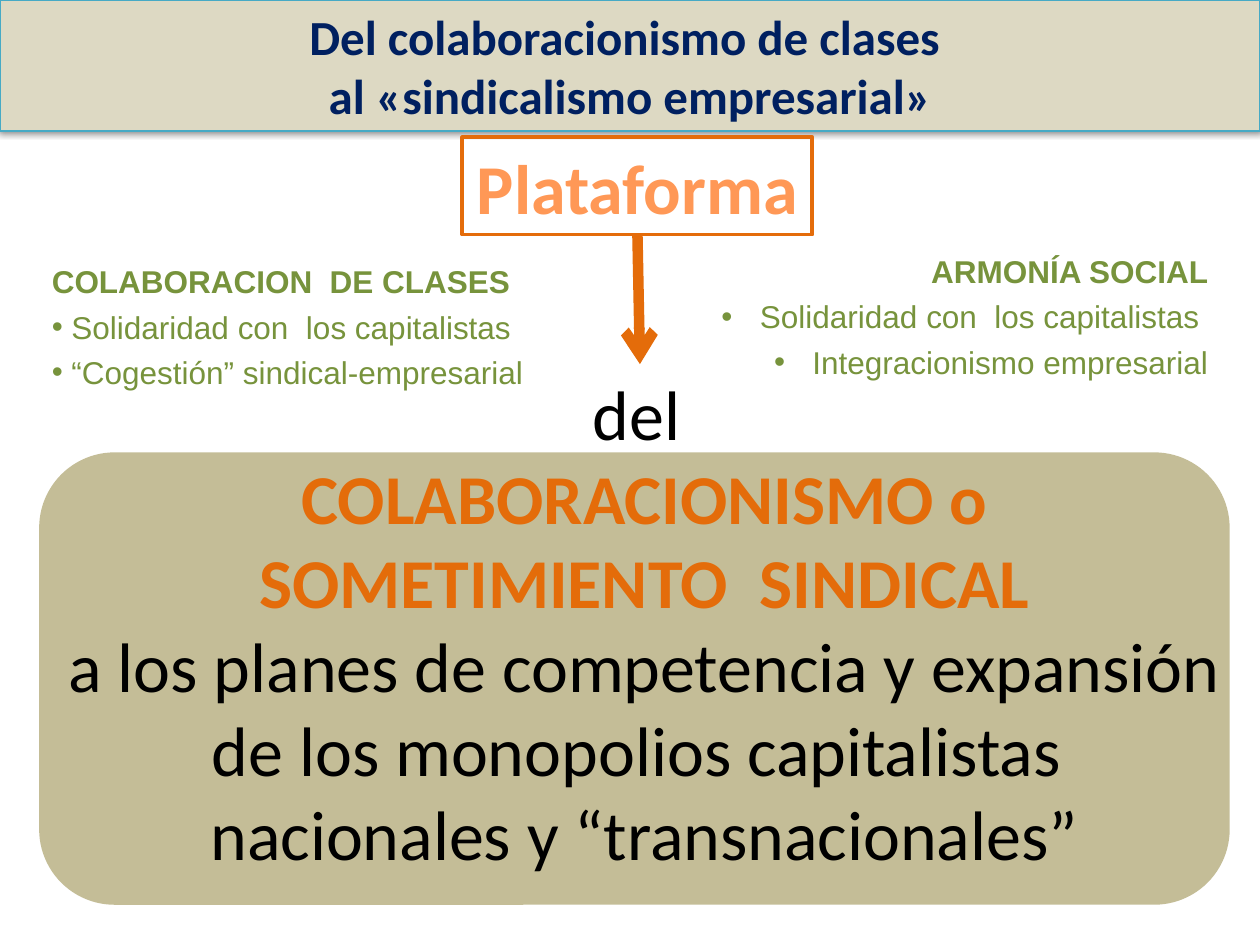
from dataclasses import dataclass

import pptx
import pptx.dml.color
import pptx.enum.dml
import pptx.enum.shapes
import pptx.enum.text
import pptx.oxml
import pptx.oxml.ns
import pptx.util
from lxml import etree
from pptx.util import Cm, Pt

ALIGN = pptx.enum.text.PP_ALIGN
SHAPE = pptx.enum.shapes.MSO_SHAPE
qn = pptx.oxml.ns.qn


@dataclass(frozen=True)
class Theme:
    heading_font: str = "Calibri"
    list_font: str = "Arial"
    title_size: int = 28
    main_size: int = 40
    list_size: int = 18
    navy: str = "002060"
    orange: str = "E46C0A"
    green: str = "77933C"
    black: str = "000000"
    sand: str = "DDD9C3"
    khaki: str = "C4BD97"
    teal: str = "46AAC5"
    glow: tuple = ((0, "9D4700"), (78, "FF9856"), (100, "FFF5F1"))


THEME = Theme()


def rgb(value):
    return pptx.dml.color.RGBColor.from_string(value)


def place(shape, left, top, width, height):
    shape.left, shape.top = Cm(left), Cm(top)
    shape.width, shape.height = Cm(width), Cm(height)


def write(frame, text, *, size, color, font=THEME.heading_font, bold=False,
          align=ALIGN.CENTER, before=0):
    """Add one paragraph, using the first one while it is still empty."""
    paragraph = frame.paragraphs[0]
    if paragraph.runs:
        paragraph = frame.add_paragraph()
    paragraph.alignment = align
    paragraph.space_before = Pt(before)
    run = paragraph.add_run()
    run.text = text
    run.font.name, run.font.size, run.font.bold = font, Pt(size), bold
    run.font.color.rgb = rgb(color)
    return paragraph


def set_bullet(paragraph, char=None, hanging=0):
    props = paragraph._p.get_or_add_pPr()
    props.set("marL", str(Cm(hanging)))
    props.set("indent", str(-Cm(hanging)))
    if char:
        etree.SubElement(props, qn("a:buFont"), typeface=THEME.list_font)
        etree.SubElement(props, qn("a:buChar"), char=char)
    else:
        etree.SubElement(props, qn("a:buNone"))


def set_gradient(font, stops):
    font.fill.gradient()
    font.fill.gradient_angle = 270
    stop_list = font._element.find(".//" + qn("a:gsLst"))
    for stop in list(stop_list):
        stop_list.remove(stop)
    for position, color in stops:
        stop = etree.SubElement(stop_list, qn("a:gs"), pos=str(position * 1000))
        etree.SubElement(stop, qn("a:srgbClr"), val=color)


def add_box(slide, kind, bounds, fill=None, line=None, line_width=0):
    box = slide.shapes.add_shape(kind, *map(Cm, bounds))
    box.shadow.inherit = False
    if fill:
        box.fill.solid()
        box.fill.fore_color.rgb = rgb(fill)
    else:
        box.fill.background()
    if line:
        box.line.color.rgb = rgb(line)
        box.line.width = Pt(line_width)
    else:
        box.line.fill.background()
    return box


def fill_title(title, lines):
    place(title, 0, 0, 25.4, 2.64)
    title.fill.solid()
    title.fill.fore_color.rgb = rgb(THEME.sand)
    title.line.color.rgb = rgb(THEME.teal)
    title.line.width = Pt(0.75)
    effects = etree.SubElement(title._element.spPr, qn("a:effectLst"))
    shadow = etree.SubElement(effects, qn("a:outerShdw"), blurRad=str(Pt(3.1)),
                              dist=str(Pt(1.6)), dir="5400000", rotWithShape="0")
    color = etree.SubElement(shadow, qn("a:srgbClr"), val=THEME.black)
    etree.SubElement(color, qn("a:alpha"), val="38000")
    frame = title.text_frame
    frame.auto_size = pptx.enum.text.MSO_AUTO_SIZE.NONE
    for line in lines:
        write(frame, line, size=THEME.title_size, color=THEME.navy, bold=True)


def fill_list(body, bounds, heading, items, align, hanging=0):
    place(body, *bounds)
    frame = body.text_frame
    frame.auto_size = pptx.enum.text.MSO_AUTO_SIZE.NONE
    style = dict(size=THEME.list_size, color=THEME.green, font=THEME.list_font,
                 align=align, before=4.3)
    set_bullet(write(frame, heading, bold=True, **style))
    for item in items:
        set_bullet(write(frame, item, **style), "•", hanging)


def add_platform(slide):
    platform = add_box(slide, SHAPE.RECTANGLE, (9.32, 2.77, 7.06, 1.96),
                       line=THEME.orange, line_width=2.25)
    platform.text_frame.word_wrap = False
    label = write(platform.text_frame, "Plataforma", size=THEME.main_size,
                  color=THEME.orange, bold=True)
    set_gradient(label.runs[0].font, THEME.glow)
    return platform


def add_arrow_below(slide, origin, end_x, end_y):
    arrow = slide.shapes.add_connector(
        pptx.enum.shapes.MSO_CONNECTOR.STRAIGHT, 0, 0, Cm(end_x), Cm(end_y))
    arrow.begin_connect(origin, 2)
    arrow.line.color.rgb = rgb(THEME.orange)
    arrow.line.width = Pt(6)
    etree.SubElement(arrow.line._get_or_add_ln(), qn("a:tailEnd"), type="arrow")
    etree.SubElement(arrow._element.spPr, qn("a:effectLst"))


def add_conclusion(slide):
    add_box(slide, SHAPE.ROUNDED_RECTANGLE, (0.79, 9.12, 24, 9.12), fill=THEME.khaki)
    conclusion = slide.shapes.add_textbox(*map(Cm, (0.99, 7.34, 24, 10.52)))
    frame = conclusion.text_frame
    frame.word_wrap = True
    write(frame, "del ", size=THEME.main_size, color=THEME.black)
    write(frame, "COLABORACIONISMO o SOMETIMIENTO  SINDICAL",
          size=THEME.main_size, color=THEME.orange, bold=True)
    for line in ("a los planes de competencia y expansión",
                 "de los monopolios capitalistas ",
                 "nacionales y “transnacionales”"):
        write(frame, line, size=THEME.main_size, color=THEME.black)


def main():
    deck = pptx.Presentation()
    deck.slide_width, deck.slide_height = Cm(25.4), Cm(19.05)
    slide = deck.slides.add_slide(deck.slide_layouts.get_by_name("Two Content"))
    title, left_list, right_list = slide.placeholders

    fill_title(title, ("\u00a0Del colaboracionismo de clases ".replace("\u00a0", ""),
                       "al «sindicalismo empresarial»"))
    fill_list(left_list, (0.79, 5.16, 12.7, 2.87), "COLABORACION  DE CLASES",
              (" Solidaridad con  los capitalistas",
               " “Cogestión” sindical-empresarial"), ALIGN.LEFT)
    fill_list(right_list, (13.69, 4.95, 10.92, 2.87), "ARMONÍA SOCIAL",
              (" Solidaridad con  los capitalistas ",
               " Integracionismo empresarial"), ALIGN.RIGHT, hanging=0.6)
    add_conclusion(slide)
    platform = add_platform(slide)
    add_arrow_below(slide, platform, 12.9, 7.34)
    deck.save("out.pptx")


if __name__ == "__main__":
    main()
